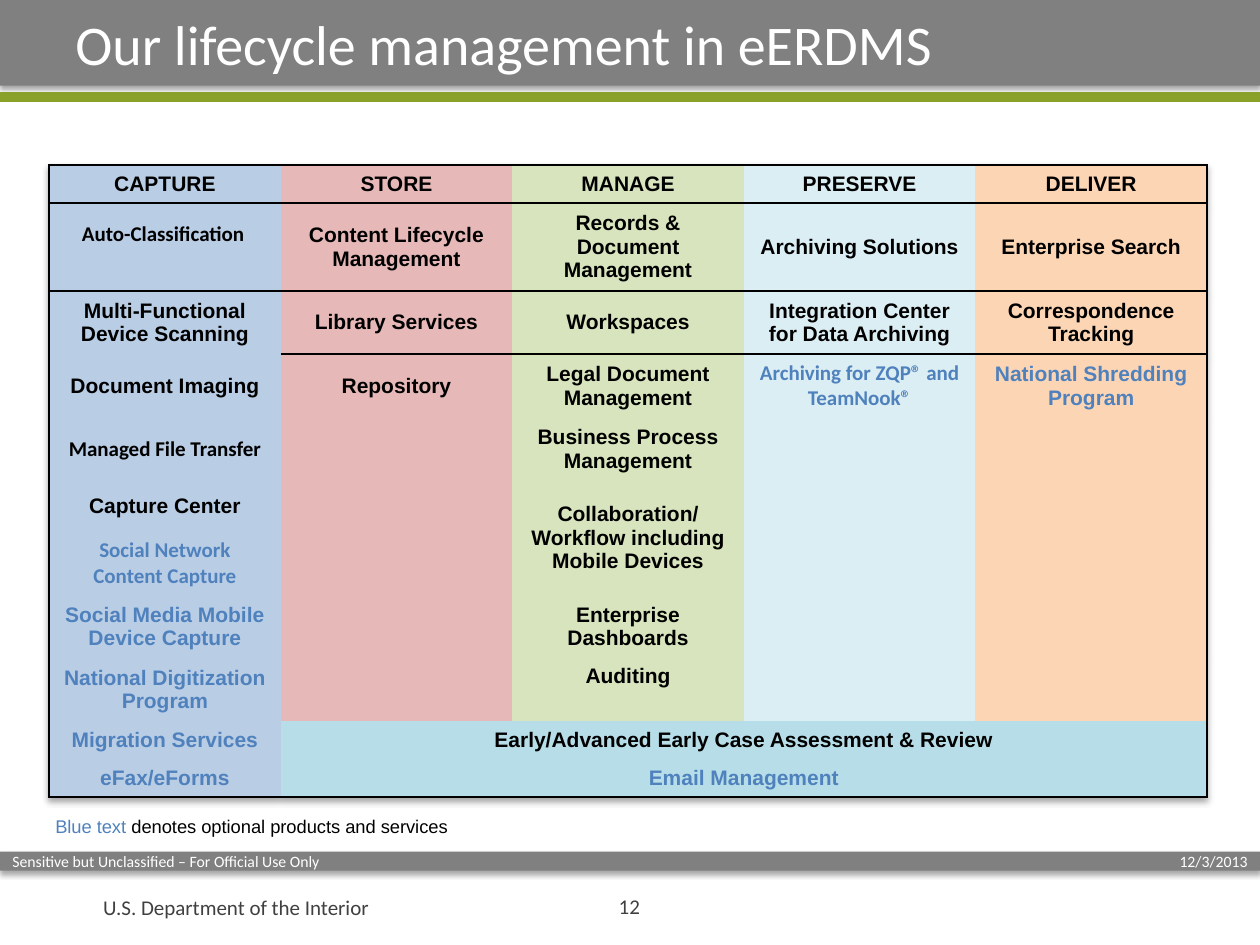
import pptx
import pptx.util
import pptx.dml.color
import pptx.enum.shapes
import pptx.enum.text
import pptx.oxml
import pptx.oxml.ns

presentation = pptx.Presentation()
presentation.slide_width = pptx.util.Inches(10)
presentation.slide_height = pptx.util.Inches(7.5)
slide = presentation.slides.add_slide(presentation.slide_layouts[6])
shapes = slide.shapes

# The page is a grid of 100 columns and 75 rows.
COLUMN = presentation.slide_width / 100
ROW = presentation.slide_height / 75
BLACK, WHITE, GRAY, DARK, BLUE = "000000", "FFFFFF", "808080", "404040", "4F81BD"
ALIGN = pptx.enum.text.PP_ALIGN
ANCHOR = pptx.enum.text.MSO_ANCHOR
NAMESPACE = pptx.oxml.ns.nsdecls("a")
SHADOW = (
    f'<a:effectLst {NAMESPACE}><a:outerShdw blurRad="39370" dist="22860" dir="5400000">'
    '<a:srgbClr val="000000"><a:alpha val="35000"/></a:srgbClr></a:outerShdw></a:effectLst>'
)


def color(value):
    return pptx.dml.color.RGBColor.from_string(value)


def write(paragraph, text, font_color, **formats):
    """Add a run in the given colour and font formats."""
    run = paragraph.add_run()
    run.text = text
    run.font.color.rgb = color(font_color)
    for name, value in formats.items():
        setattr(run.font, name, value)


# Gray bands and green rule
for top, height in ((67.6, 1.5), (-0.1, 6.9)):
    band = shapes.add_shape(
        pptx.enum.shapes.MSO_SHAPE.RECTANGLE,
        0, int(top * ROW), int(100 * COLUMN), int(height * ROW))
    band.fill.solid()
    band.fill.fore_color.rgb = color(GRAY)
    band.line.fill.background()
    band._element.spPr.append(pptx.oxml.parse_xml(SHADOW))

rule = shapes.add_connector(
    pptx.enum.shapes.MSO_CONNECTOR.STRAIGHT,
    0, int(7.7 * ROW), int(100 * COLUMN), int(7.7 * ROW))
rule.line.color.rgb = color("89A129")
rule.line.width = pptx.util.Pt(6)
rule._element.spPr.append(pptx.oxml.parse_xml(f"<a:effectLst {NAMESPACE}/>"))

# Lifecycle table; a line break starts a new paragraph
columns = {
    "CAPTURE": ("B9CDE5", [
        "", "Multi-Functional Device Scanning", "Document Imaging",
        "Managed File Transfer", "Capture Center", "Social Network\nContent Capture",
        "Social Media Mobile Device Capture", "National Digitization Program",
        "Migration Services", "eFax/eForms"]),
    "STORE": ("E6B9B8", [
        "Content Lifecycle Management", "Library Services", "Repository"]),
    "MANAGE": ("D7E4BD", [
        "Records & Document Management", "Workspaces", "Legal Document Management",
        "Business Process Management",
        "Collaboration/ Workflow including Mobile Devices", "",
        "Enterprise\nDashboards", "Auditing"]),
    "PRESERVE": ("DBEEF4", [
        "Archiving Solutions", "Integration Center for Data Archiving",
        "Archiving for ZQP® and TeamNook®"]),
    "DELIVER": ("FCD5B5", [
        "Enterprise Search", "Correspondence Tracking", "National Shredding Program"]),
}
shared_services = {9: "Early/Advanced Early Case Assessment & Review", 10: "Email Management"}
calibri_texts = {
    "Managed File Transfer", "Social Network\nContent Capture",
    "Archiving for ZQP® and TeamNook®"}
optional_texts = {
    "Archiving for ZQP® and TeamNook®", "National Shredding Program",
    "Social Network\nContent Capture", "Social Media Mobile Device Capture",
    "National Digitization Program", "Migration Services", "eFax/eForms",
    "Email Management"}
row_heights = [3, 7, 5, 5, 5, 4, 5, 5, 5, 3, 3]
last_row, last_column = len(row_heights) - 1, len(columns) - 1

frame = shapes.add_table(
    len(row_heights), len(columns), int(3.9 * COLUMN), int(13.1 * ROW),
    int(91.9 * COLUMN), int(sum(row_heights) * ROW))
table = frame.table
table.first_row = table.horz_banding = False
properties = table._tbl.tblPr
properties[0].text = "{2D5ABB26-0587-4C30-8999-92F81FD0307C}"  # no style, no grid
properties.insert(0, pptx.oxml.parse_xml(SHADOW))
for table_row, height in zip(table.rows, row_heights):
    table_row.height = int(height * ROW)
for table_column in table.columns:
    table_column.width = int(91.9 / len(columns) * COLUMN)

for column, (heading, (column_fill, items)) in enumerate(columns.items()):
    for row in range(len(row_heights)):
        cell = table.cell(row, column)
        shared = row in shared_services and column > 0
        if shared:
            text = shared_services[row] if column == 1 else ""
        else:
            text = dict(enumerate([heading] + items)).get(row, "")
        cell.vertical_anchor = ANCHOR.TOP if text == "Auditing" else ANCHOR.MIDDLE

        edges = {
            "L": column == 0,
            "R": column == last_column or shared,
            "T": row == 0 or row == 1 or (row == 2 and column > 0),
            "B": row == 0 or row == last_row or (row == 1 and column > 0),
        }
        for side in (side for side, drawn in edges.items() if drawn):
            width = 19050 if side == "B" and row == last_row else 12700
            cell._tc.get_or_add_tcPr().append(pptx.oxml.parse_xml(
                f'<a:ln{side} {NAMESPACE} w="{width}"><a:solidFill>'
                f'<a:srgbClr val="{BLACK}"/></a:solidFill></a:ln{side}>'))
        cell.fill.solid()
        cell.fill.fore_color.rgb = color("B7DEE8" if shared else column_fill)

        for index, line in enumerate(text.split("\n")):
            text_frame = cell.text_frame
            paragraph = text_frame.add_paragraph() if index else text_frame.paragraphs[0]
            paragraph.alignment = ALIGN.CENTER
            if line:
                write(paragraph, line, BLUE if text in optional_texts else BLACK,
                      name="Calibri" if text in calibri_texts else "Arial",
                      size=pptx.util.Pt(12), bold=True)
            else:
                paragraph._p.append(pptx.oxml.parse_xml(
                    f'<a:endParaRPr {NAMESPACE} sz="1200"/>'))

table.cell(5, 2).merge(table.cell(6, 2))
for row in shared_services:
    table.cell(row, 1).merge(table.cell(row, last_column))

# Text boxes: place in columns and rows, alignment, anchor, wrap, font, size, bold, runs
labels = [
    ((5, 0, 90, 6.9), ALIGN.LEFT, ANCHOR.MIDDLE, True, "Calibri", 32, False,
     [("Our lifecycle management in eERDMS", WHITE)]),
    ((7.2, 70.5, 25.7, 3), ALIGN.LEFT, ANCHOR.MIDDLE, True, "Calibri", 12, False,
     [("U.S. Department of the Interior", DARK)]),
    ((0, 67.1, 39, 2.5), ALIGN.LEFT, ANCHOR.MIDDLE, True, "Calibri", 9, False,
     [("Sensitive but Unclassified – For Official Use Only", WHITE)]),
    ((61, 67.1, 39, 2.5), ALIGN.RIGHT, ANCHOR.MIDDLE, True, "Calibri", 9, False,
     [("12/3/2013", WHITE)]),
    ((42.5, 69.7, 14.9, 4.5), ALIGN.CENTER, ANCHOR.MIDDLE, True, "Calibri", 12, False,
     [("12", DARK)]),
    ((3.4, 64.2, 33.8, 2.8), ALIGN.LEFT, ANCHOR.TOP, False, "Arial", 10.5, False,
     [("Blue text ", BLUE), ("denotes optional products and services", BLACK)]),
    ((5.4, 17, 15.1, 3), ALIGN.CENTER, ANCHOR.TOP, False, "Calibri", 12, True,
     [("Auto-Classification", BLACK)]),
]
for (left, top, width, height), alignment, anchor, wrap, font, size, bold, runs in labels:
    box = shapes.add_textbox(
        int(left * COLUMN), int(top * ROW), int(width * COLUMN), int(height * ROW))
    box.text_frame.word_wrap = wrap
    box.text_frame.vertical_anchor = anchor
    paragraph = box.text_frame.paragraphs[0]
    paragraph.alignment = alignment
    for text, font_color in runs:
        write(paragraph, text, font_color, name=font, size=pptx.util.Pt(size), bold=bold)

presentation.save("out.pptx")
